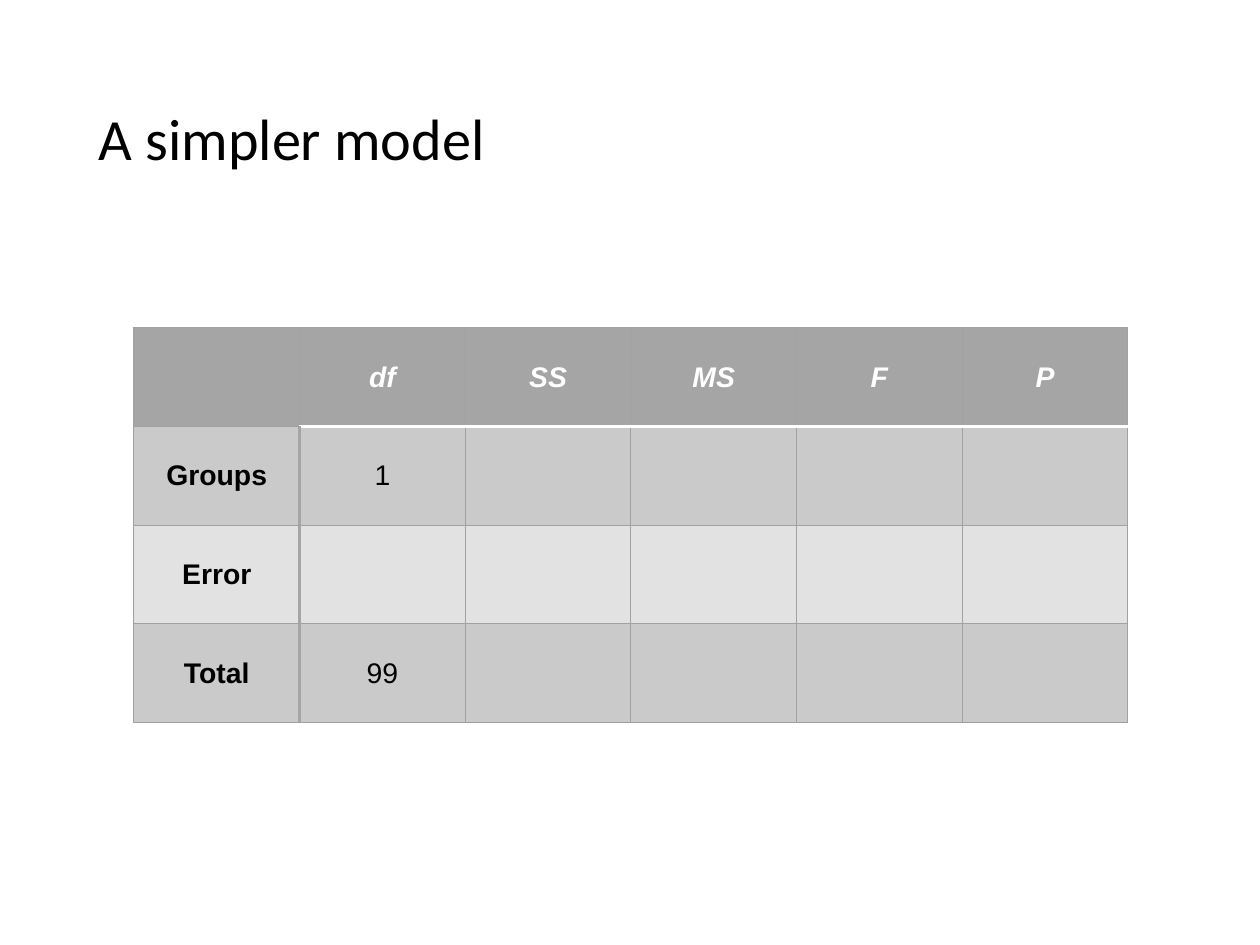
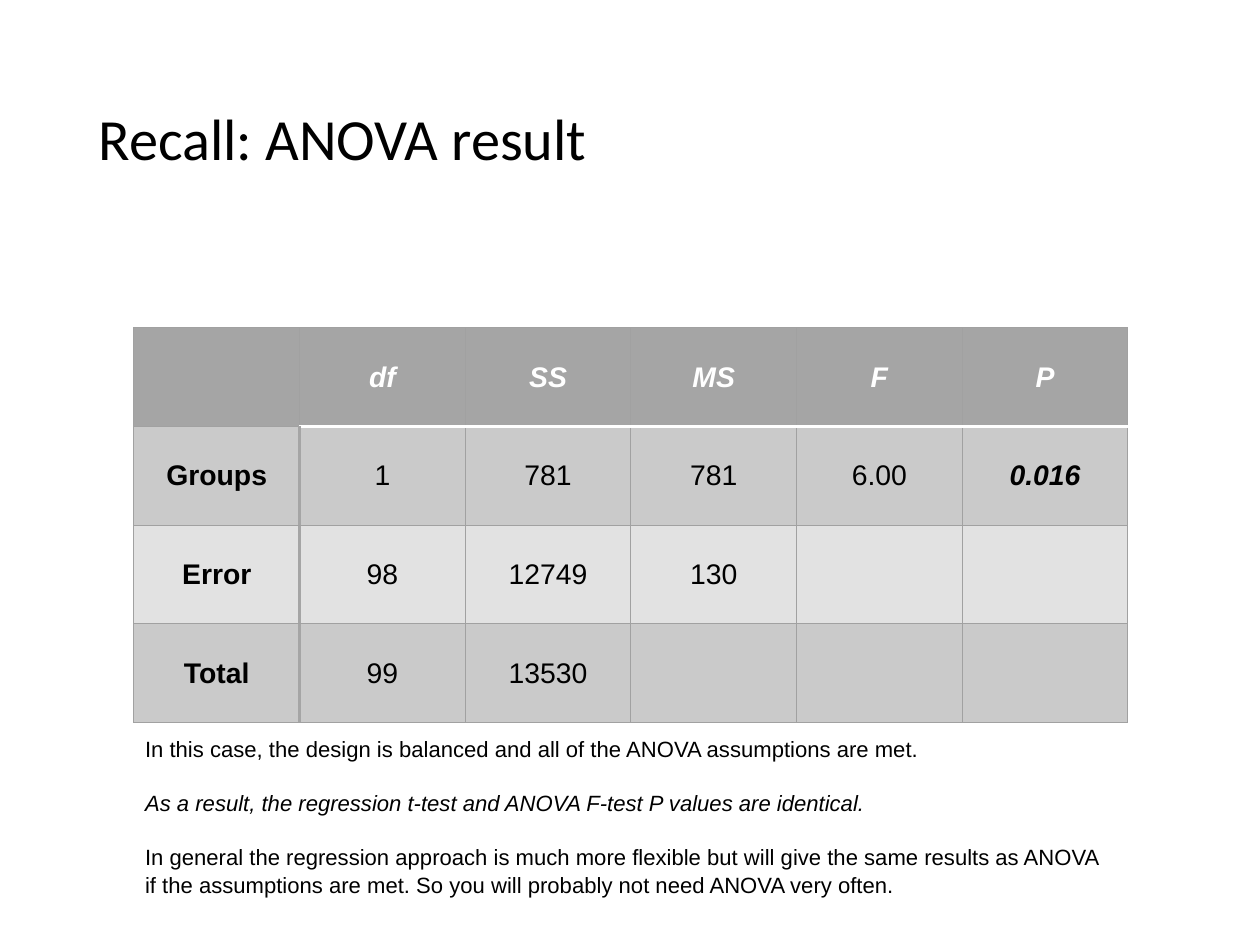
from dataclasses import dataclass
from typing import Any

from lxml.etree import SubElement
from pptx import Presentation
from pptx.dml.color import RGBColor
from pptx.enum.text import MSO_ANCHOR, PP_ALIGN
from pptx.oxml.ns import qn
from pptx.util import Cm, Pt

COLORS = {
    "text": "000000",
    "header_text": "FFFFFF",
    "header_fill": "A5A5A5",
    "band_fill": "CACACA",
    "plain_fill": "E2E2E2",
    "grid": "A1A1A1",
    "header_rule": "FFFFFF",
    "label_rule": "A5A5A5",
}

TITLE_FONT = {"name": "Calibri", "size": Pt(37)}
TABLE_FONT = {"name": "Arial", "size": Pt(18)}
NOTE_FONT = {"name": "Arial", "size": Pt(14)}

TITLE_FRAME = {
    "word_wrap": True,
    "vertical_anchor": MSO_ANCHOR.MIDDLE,
    "margin_left": Cm(0.28),
    "margin_right": Cm(0.28),
    "margin_top": Cm(0.28),
    "margin_bottom": Cm(0.28),
}
NOTE_FRAME = {"word_wrap": True, "margin_right": Cm(0.4)}

TABLE_LEFT, TABLE_TOP = Cm(3), Cm(7.34)
COLUMN_WIDTH, ROW_HEIGHT = Cm(3.71), Cm(2.21)
HEADER = ("", "df", "SS", "MS", "F", "P")


@dataclass(frozen=True)
class Border:
    color: str
    width: float


GRID = Border("grid", 0.75)
HEADER_RULE = Border("header_rule", 2)
LABEL_RULE = Border("label_rule", 2)


@dataclass(frozen=True)
class Note:
    text: str
    italic: bool = False


@dataclass(frozen=True)
class AnovaSlide:
    title: str
    rows: tuple[tuple[str, ...], ...]
    significant: str = ""
    notes: tuple[Note, ...] = ()


SLIDES = (
    AnovaSlide(
        "A simpler model",
        (("Groups", "1"), ("Error",), ("Total", "99")),
    ),
    AnovaSlide(
        "Recall: ANOVA result",
        (
            ("Groups", "1", "781", "781", "6.00", "0.016"),
            ("Error", "98", "12749", "130"),
            ("Total", "99", "13530"),
        ),
        significant="0.016",
        notes=(
            Note("In this case, the design is balanced and all of the ANOVA assumptions are met."),
            Note("As a result, the regression t-test and ANOVA F-test P values are identical.", italic=True),
            Note(
                "In general the regression approach is much more flexible but will give the same "
                "results as ANOVA if the assumptions are met. So you will probably not need ANOVA very often."
            ),
        ),
    ),
)


def apply_format(target: Any, values: dict[str, Any]) -> None:
    for name, value in values.items():
        setattr(target, name, value)


def format_font(font: Any, values: dict[str, Any], color: str = "text") -> None:
    apply_format(font, values)
    font.color.rgb = RGBColor.from_string(COLORS[color])


def add_title(slide: Any, text: str) -> None:
    frame = slide.shapes.add_textbox(Cm(1.93), Cm(1.12), Cm(24.33), Cm(4.09)).text_frame
    apply_format(frame, TITLE_FRAME)
    paragraph = frame.paragraphs[0]
    paragraph.text = text
    paragraph.line_spacing = 0.9
    format_font(paragraph.runs[0].font, TITLE_FONT)


def draw_borders(cell: Any, row: int, column: int) -> None:
    """Grid lines, with a white rule below the header and a wide one beside the labels."""
    borders = {
        "a:lnL": LABEL_RULE if row and column == 1 else GRID,
        "a:lnR": LABEL_RULE if row and column == 0 else GRID,
        "a:lnT": HEADER_RULE if row == 1 and column else GRID,
        "a:lnB": HEADER_RULE if row == 0 and column else GRID,
    }
    properties = cell._tc.get_or_add_tcPr()
    for tag, border in borders.items():
        line = SubElement(properties, qn(tag), w=str(Pt(border.width)))
        fill = SubElement(line, qn("a:solidFill"))
        SubElement(fill, qn("a:srgbClr"), val=COLORS[border.color])


def fill_color(row: int) -> str:
    if row == 0:
        return "header_fill"
    return "band_fill" if row % 2 else "plain_fill"


def add_anova_table(slide: Any, content: AnovaSlide) -> None:
    rows = (HEADER, *content.rows)
    table = slide.shapes.add_table(
        len(rows), len(HEADER), TABLE_LEFT, TABLE_TOP,
        COLUMN_WIDTH * len(HEADER), ROW_HEIGHT * len(rows),
    ).table
    for row, values in enumerate(rows):
        for column in range(len(HEADER)):
            cell = table.cell(row, column)
            text = values[column] if column < len(values) else ""
            emphasized = row == 0 or (text != "" and text == content.significant)
            draw_borders(cell, row, column)
            cell.fill.solid()
            cell.fill.fore_color.rgb = RGBColor.from_string(COLORS[fill_color(row)])
            cell.vertical_anchor = MSO_ANCHOR.MIDDLE
            paragraph = cell.text_frame.paragraphs[0]
            paragraph.alignment = PP_ALIGN.CENTER
            if text:
                run = paragraph.add_run()
                run.text = text
                style = {**TABLE_FONT, "bold": emphasized or column == 0, "italic": emphasized}
                format_font(run.font, style, "text" if row else "header_text")


def add_notes_below_table(slide: Any, notes: tuple[Note, ...]) -> None:
    frame = slide.shapes.add_textbox(
        TABLE_LEFT, Cm(16.33), COLUMN_WIDTH * len(HEADER), Cm(3.94)
    ).text_frame
    apply_format(frame, NOTE_FRAME)
    for index, note in enumerate(notes):
        paragraph = frame.add_paragraph() if index else frame.paragraphs[0]
        paragraph.text = note.text
        paragraph.line_spacing = 1.04
        if index:
            paragraph.space_before = Pt(16.8)
        format_font(paragraph.runs[0].font, {**NOTE_FONT, "italic": note.italic})


def main() -> None:
    presentation = Presentation()
    presentation.slide_width, presentation.slide_height = Cm(28.22), Cm(21.16)
    for content in SLIDES:
        slide = presentation.slides.add_slide(presentation.slide_layouts[6])
        add_title(slide, content.title)
        add_anova_table(slide, content)
        if content.notes:
            add_notes_below_table(slide, content.notes)
    presentation.save("out.pptx")


if __name__ == "__main__":
    main()
